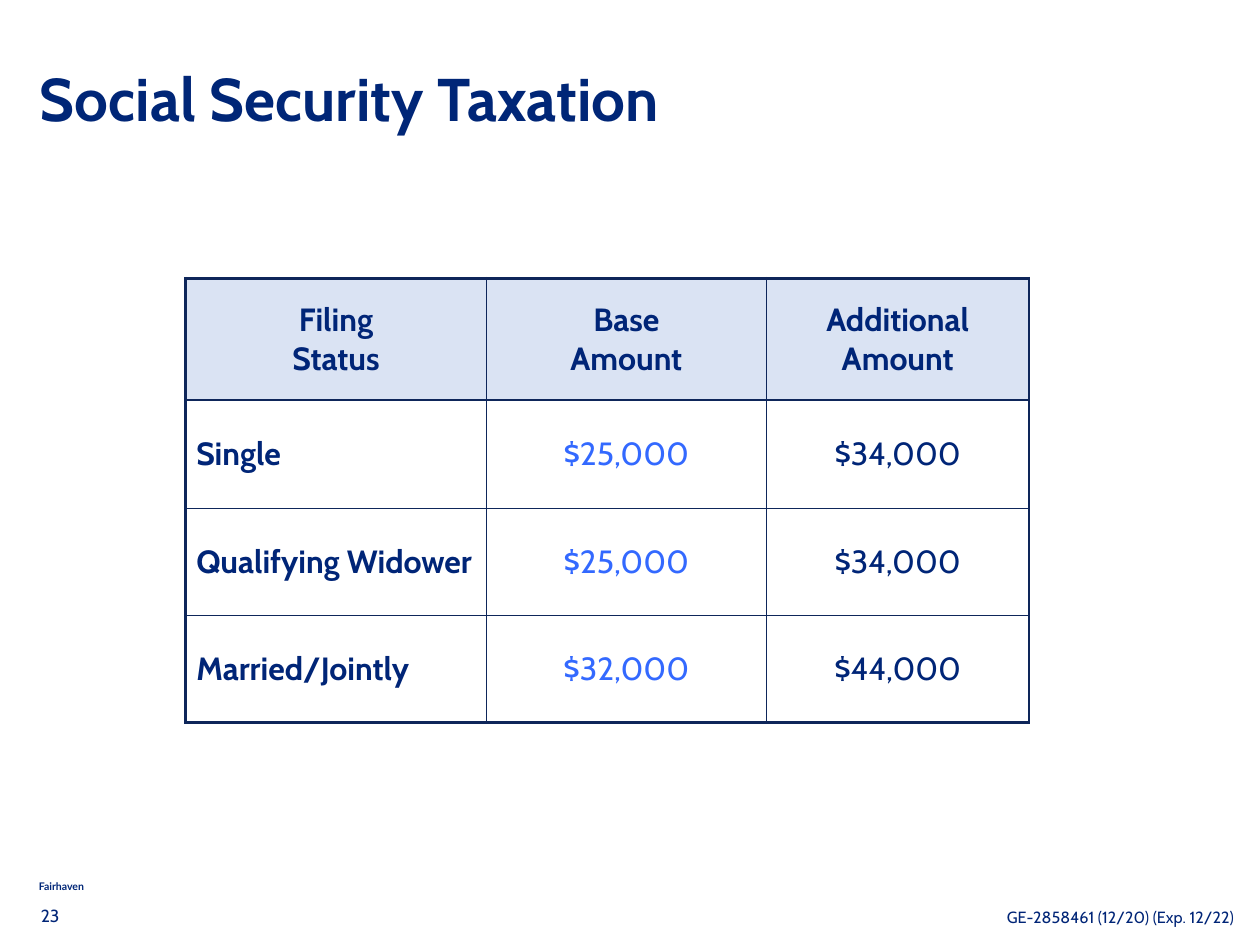
from lxml.etree import SubElement
from pptx import Presentation
from pptx.dml.color import RGBColor
from pptx.enum.text import MSO_ANCHOR, MSO_AUTO_SIZE, PP_ALIGN
from pptx.oxml.ns import qn
from pptx.util import Inches, Pt

NAVY = RGBColor(0x00, 0x26, 0x77)
INK = RGBColor(0x00, 0x25, 0x77)
BLUE = RGBColor(0x33, 0x69, 0xFF)
PALE = RGBColor(0xDA, 0xE3, 0xF3)
BORDER = RGBColor(0x0E, 0x26, 0x5A)
THIN, THICK = Pt(1), Pt(2.25)

COLUMNS = [2.86, 2.67, 2.5]
ROWS = [1.16, 1.03, 1.02, 1.02]
THRESHOLDS = [
    ["Filing\nStatus", "Base\nAmount", "Additional\nAmount"],
    ["Single", "$25,000", "$34,000"],
    ["Qualifying Widower", "$25,000", "$34,000"],
    ["Married/Jointly", "$32,000", "$44,000"],
]


def write(p, text, size, color, bold=False, font="Cabin"):
    p.text = text
    for r in p.runs:
        r.font.name = font
        r.font.size = Pt(size)
        r.font.bold = bold
        r.font.color.rgb = color


def add_title(slide, text, box):
    sp = slide.shapes.title
    sp.left, sp.top, sp.width, sp.height = map(Inches, box)
    tf = sp.text_frame
    tf.auto_size = MSO_AUTO_SIZE.NONE
    tf.vertical_anchor = MSO_ANCHOR.MIDDLE
    p = tf.paragraphs[0]
    write(p, text, 41.3, NAVY, bold=True)
    p.alignment = PP_ALIGN.LEFT
    p.line_spacing = 0.9


def add_label(slide, text, box, size, color=INK, **style):
    tf = slide.shapes.add_textbox(*map(Inches, box)).text_frame
    tf.word_wrap = True
    p = tf.paragraphs[0]
    write(p, text, size, color, **style)
    p.line_spacing = 0.9
    return tf


def add_footer(slide, box):
    left, top, width, height = box
    brand = add_label(slide, "Fairhaven", (left + 0.01, top, 1.86, 0.24), 7.2,
                      NAVY, bold=True, font="Lato")
    brand.vertical_anchor = MSO_ANCHOR.MIDDLE
    brand.margin_left = brand.margin_right = Inches(0.07)
    brand.margin_top = brand.margin_bottom = Inches(0.04)
    add_label(slide, "23", (left, top + 0.26, 2.38, 0.3), 12)
    add_label(slide, "GE-2858461 (12/20) (Exp. 12/22)",
              (left + width - 2.38, top + 0.28, 2.38, 0.3), 11.1)


def set_borders(cell, **widths):
    tcPr = cell._tc.get_or_add_tcPr()
    for side, width in widths.items():
        ln = SubElement(tcPr, qn(f"a:ln{side}"), w=str(width))
        fill = SubElement(ln, qn("a:solidFill"))
        SubElement(fill, qn("a:srgbClr"), val=str(BORDER))


def format_cell(cell, text, row, col):
    last_row, last_col = len(ROWS) - 1, len(COLUMNS) - 1
    set_borders(cell,
                L=THICK if col == 0 else THIN,
                R=THICK if col == last_col else THIN,
                T=THICK if row == 0 else THIN,
                B=THICK if row == last_row else THIN)
    if row == 0:
        cell.fill.solid()
        cell.fill.fore_color.rgb = PALE
    else:
        cell.fill.background()
    cell.vertical_anchor = MSO_ANCHOR.MIDDLE
    cell.margin_left = cell.margin_right = Inches(0.1)
    cell.margin_top = cell.margin_bottom = Inches(0.1)
    p = cell.text_frame.paragraphs[0]
    write(p, text, 22, BLUE if row and col == 1 else INK,
          bold=row == 0 or col == 0)
    p.alignment = PP_ALIGN.LEFT if row and col == 0 else PP_ALIGN.CENTER


def add_thresholds(slide, left, top):
    frame = slide.shapes.add_table(
        len(ROWS), len(COLUMNS), Inches(left), Inches(top),
        Inches(sum(COLUMNS)), Inches(sum(ROWS)))
    table = frame.table
    table.first_row = table.horz_banding = False
    for column, width in zip(table.columns, COLUMNS):
        column.width = Inches(width)
    for row, height in zip(table.rows, ROWS):
        row.height = Inches(height)
    for i, texts in enumerate(THRESHOLDS):
        for j, text in enumerate(texts):
            format_cell(table.cell(i, j), text, i, j)


def main():
    prs = Presentation()
    prs.slide_width, prs.slide_height = Inches(12), Inches(9)
    slide = prs.slides.add_slide(prs.slide_layouts[5])
    add_title(slide, "Social Security Taxation", (0.28, 0.59, 11.34, 0.77))
    add_thresholds(slide, 1.77, 2.65)
    add_footer(slide, (0.29, 8.33, 11.58, 0.56))
    prs.save("out.pptx")


if __name__ == "__main__":
    main()
